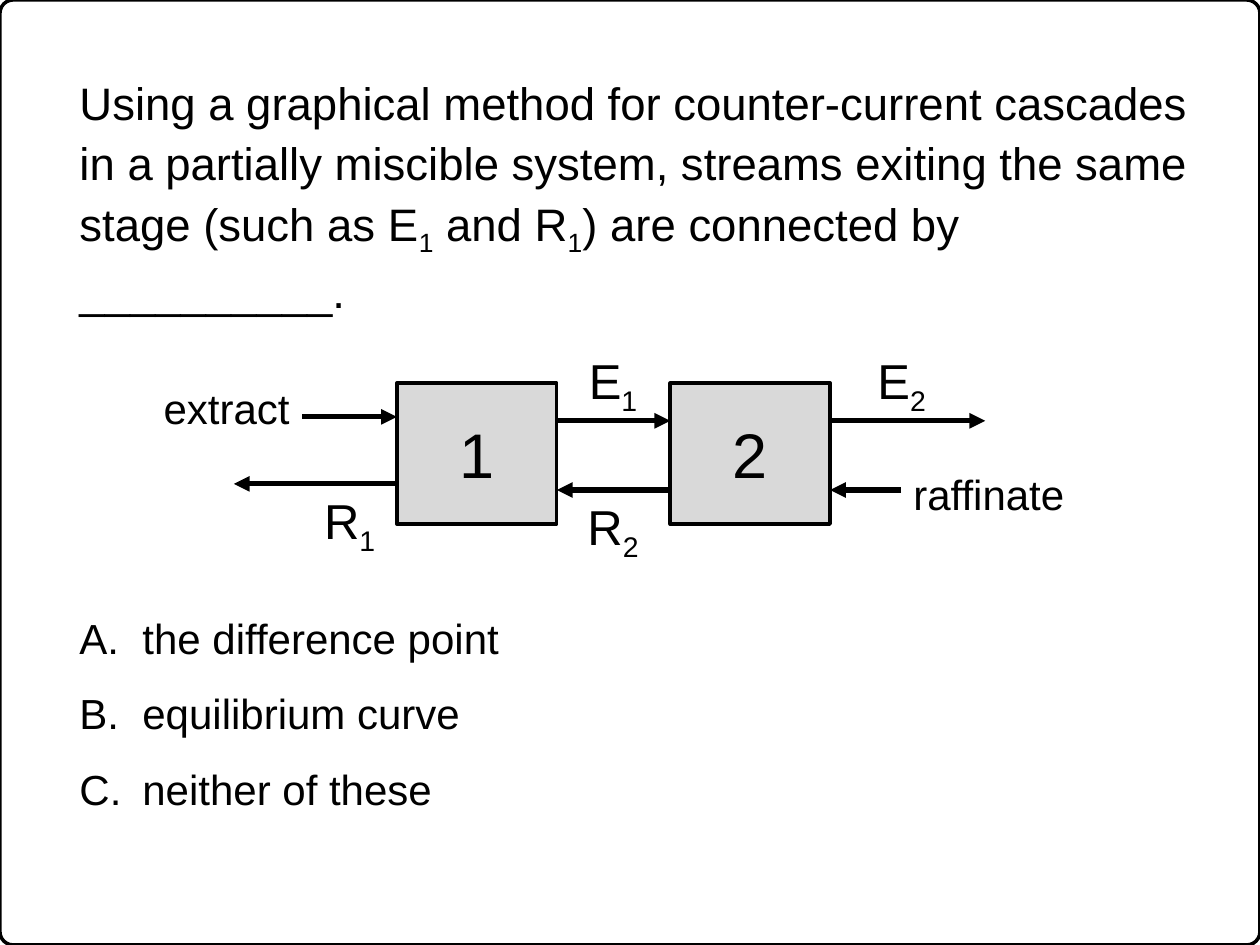
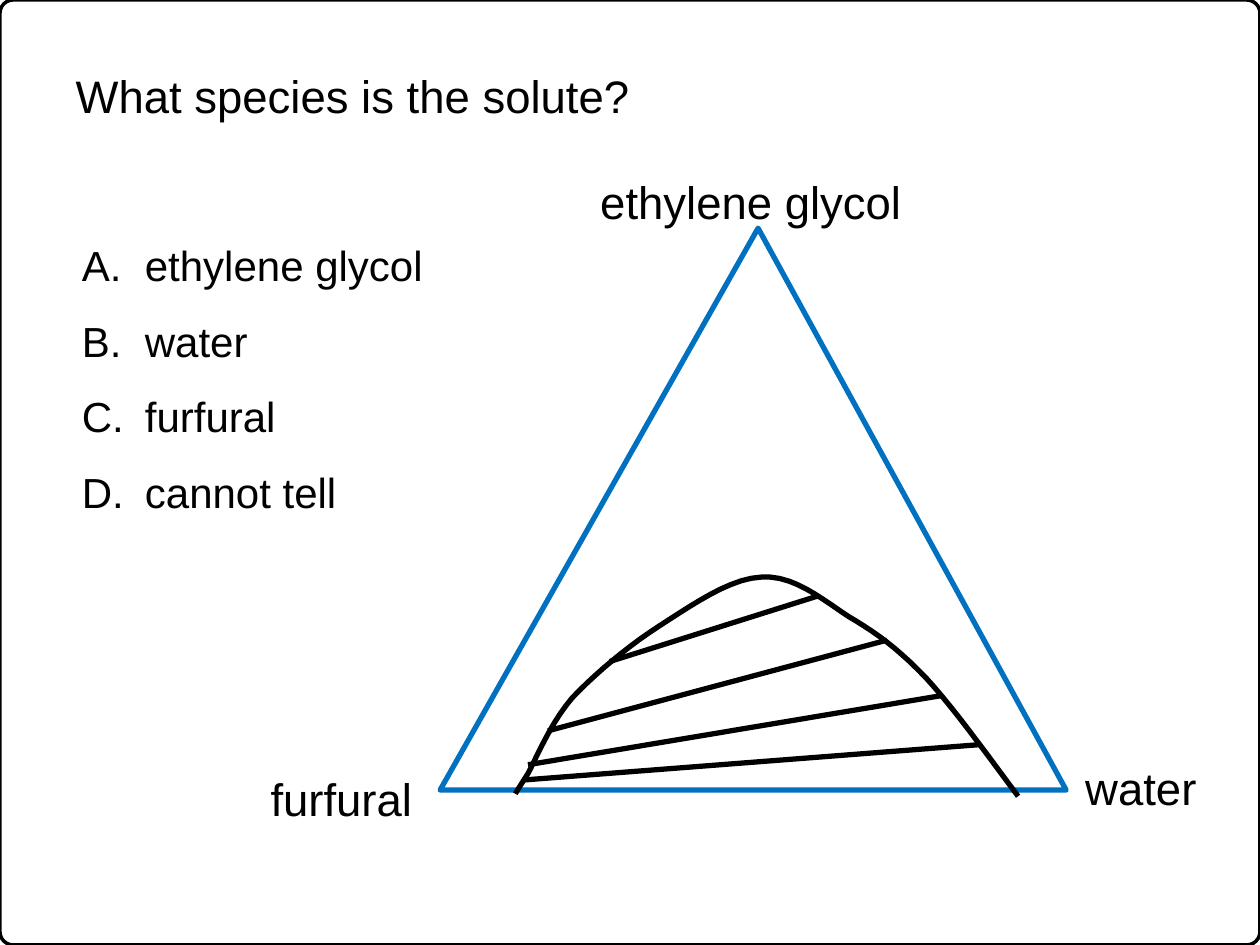
from lxml import etree
from pptx import Presentation
from pptx.dml.color import RGBColor
from pptx.enum.shapes import MSO_CONNECTOR, MSO_SHAPE
from pptx.enum.text import MSO_ANCHOR, MSO_AUTO_SIZE, PP_ALIGN
from pptx.oxml.ns import qn
from pptx.util import Pt

RECTANGLE = MSO_SHAPE.RECTANGLE
ROUNDED_RECTANGLE = MSO_SHAPE.ROUNDED_RECTANGLE
TRIANGLE = MSO_SHAPE.ISOSCELES_TRIANGLE
STRAIGHT = MSO_CONNECTOR.STRAIGHT
LEFT, CENTER = PP_ALIGN.LEFT, PP_ALIGN.CENTER
TOP, MIDDLE = MSO_ANCHOR.TOP, MSO_ANCHOR.MIDDLE
NO_AUTO_SIZE = MSO_AUTO_SIZE.NONE

FONT = "Arial"
BLACK, GRAY, BLUE = "000000", "D9D9D9", "0070C0"
SLIDE_WIDTH, SLIDE_HEIGHT = 720, 540
TITLE_ONLY = 5
QUESTION_SIZE, ANSWER_SIZE = 26, 24
ANSWER_INDENT = 36
CURVE_STEPS = 10


def color(hex_string):
    return RGBColor.from_string(hex_string)


def points(*lengths):
    return [Pt(length) for length in lengths]


def format_runs(paragraph, size):
    for run in paragraph.runs:
        run.font.name = FONT
        run.font.size = Pt(size)
        run.font.color.rgb = color(BLACK)


def write_with_subscripts(paragraph, parts, size):
    for index, part in enumerate(parts):
        run = paragraph.add_run()
        run.text = part
        if index % 2:
            run.font._element.set("baseline", "-25000")
    format_runs(paragraph, size)


def remove_margins(text_frame):
    text_frame.margin_left = text_frame.margin_right = 0
    text_frame.margin_top = text_frame.margin_bottom = 0


def style_shape(shape, line_color, line_width, fill=None):
    shape.shadow.inherit = False
    if fill:
        shape.fill.solid()
        shape.fill.fore_color.rgb = color(fill)
    else:
        shape.fill.background()
    shape.line.color.rgb = color(line_color)
    shape.line.width = Pt(line_width)


def add_question_slide(presentation, question, left, top, width):
    slide = presentation.slides.add_slide(presentation.slide_layouts[TITLE_ONLY])
    frame = slide.shapes.add_shape(
        ROUNDED_RECTANGLE, *points(0, 0, SLIDE_WIDTH, SLIDE_HEIGHT))
    frame.adjustments[0] = 0.014
    style_shape(frame, BLACK, 2)

    title = slide.shapes.title
    title.left, title.top, title.width, title.height = points(left, top, width, 180)
    text_frame = title.text_frame
    text_frame.auto_size = NO_AUTO_SIZE
    text_frame.vertical_anchor = TOP
    remove_margins(text_frame)
    paragraph = text_frame.paragraphs[0]
    paragraph.alignment = LEFT
    paragraph.line_spacing = 1.1
    write_with_subscripts(paragraph, question, QUESTION_SIZE)
    return slide


def add_lettering(paragraph):
    properties = paragraph._p.get_or_add_pPr()
    properties.set("marL", str(Pt(ANSWER_INDENT)))
    properties.set("indent", str(-Pt(ANSWER_INDENT)))
    bullet_color = etree.SubElement(properties, qn("a:buClr"))
    etree.SubElement(bullet_color, qn("a:srgbClr"), val=BLACK)
    etree.SubElement(properties, qn("a:buFont"), typeface=FONT)
    etree.SubElement(properties, qn("a:buAutoNum"), type="alphaUcPeriod")


def add_answers(slide, answers, left, top, width, height):
    box = slide.shapes.add_textbox(*points(left, top, width, height))
    text_frame = box.text_frame
    text_frame.word_wrap = True
    remove_margins(text_frame)
    text_frame.text = "\n".join(answers)
    for paragraph in text_frame.paragraphs:
        add_lettering(paragraph)
        paragraph.line_spacing = 1.5
        format_runs(paragraph, ANSWER_SIZE)


def add_label(slide, parts, left, top, width, height, size, alignment=CENTER):
    box = slide.shapes.add_textbox(*points(left, top, width, height))
    box.text_frame.word_wrap = True
    paragraph = box.text_frame.paragraphs[0]
    paragraph.alignment = alignment
    write_with_subscripts(paragraph, parts, size)


def add_stage(slide, number, left, top, width, height):
    stage = slide.shapes.add_shape(RECTANGLE, *points(left, top, width, height))
    style_shape(stage, BLACK, 2, GRAY)
    stage.text_frame.text = number
    stage.text_frame.vertical_anchor = MIDDLE
    paragraph = stage.text_frame.paragraphs[0]
    paragraph.alignment = CENTER
    format_runs(paragraph, 36)


def add_line(slide, start_x, start_y, end_x, end_y, arrow=False):
    connector = slide.shapes.add_connector(
        STRAIGHT, *points(start_x, start_y, end_x, end_y))
    connector.line.color.rgb = color(BLACK)
    connector.line.width = Pt(3)
    if arrow:
        line = connector.line._get_or_add_ln()
        etree.SubElement(line, qn("a:tailEnd"), type="triangle")
    etree.SubElement(connector._element.spPr, qn("a:effectLst"))


def bezier_point(start, control_1, control_2, end, t):
    return tuple(
        (1 - t) ** 3 * a + 3 * (1 - t) ** 2 * t * b + 3 * (1 - t) * t ** 2 * c + t ** 3 * d
        for a, b, c, d in zip(start, control_1, control_2, end))


def add_curve(slide, start, segments):
    vertices = []
    current = start
    for control_1, control_2, end in segments:
        for step in range(1, CURVE_STEPS + 1):
            x, y = bezier_point(current, control_1, control_2, end, step / CURVE_STEPS)
            vertices.append((Pt(x), Pt(y)))
        current = end
    builder = slide.shapes.build_freeform(*points(*start))
    builder.add_line_segments(vertices, close=False)
    style_shape(builder.convert_to_shape(), BLACK, 3)


def add_cascade(slide):
    stage_width, stage_top, stage_height = 91.4, 218.9, 80.6
    first_left, second_left = 226.8, 383
    first_right, second_right = first_left + stage_width, second_left + stage_width
    for number, left in (("1", first_left), ("2", second_left)):
        add_stage(slide, number, left, stage_top, stage_width, stage_height)

    streams = [
        (172.8, first_left, 238.2),
        (first_right, second_left, 240.5),
        (second_right, 563, 240.5),
        (515, second_right, 280),
        (second_left, first_right, 280),
        (first_left, 133.6, 276.5),
    ]
    for start_x, end_x, y in streams:
        add_line(slide, start_x, y, end_x, y, arrow=True)

    add_label(slide, ["extract"], 86.4, 215.3, 95, 36, 24, LEFT)
    add_label(slide, ["raffinate"], 514.8, 264.2, 116.6, 36, 24, LEFT)
    stream_names = [
        ("E", "1", 323.3, 196.6),
        ("E", "2", 488.2, 196.6),
        ("R", "2", 323.3, 280),
        ("R", "1", 172.8, 276.5),
    ]
    for letter, number, left, top in stream_names:
        add_label(slide, [letter, number], left, top, 54, 45.4, 28)


def add_ternary_diagram(slide):
    triangle = slide.shapes.add_shape(TRIANGLE, *points(251.5, 130.4, 357.8, 321.1))
    triangle.adjustments[0] = 0.508
    style_shape(triangle, BLUE, 3)

    add_curve(slide, (294.5, 453.6), [
        ((295.2, 452.2), (301.7, 442.1), (301.7, 442.1)),
        ((306.7, 432.7), (314.6, 413.3), (326.9, 398.9)),
        ((339.8, 385.2), (358.6, 369.4), (376.6, 357.8)),
        ((394.6, 346.3), (416.9, 330.5), (434.9, 329.8)),
        ((452.9, 328.3), (469.4, 342), (484.6, 352.1)),
        ((500.4, 361.4), (512.6, 370.1), (529.2, 387.4)),
        ((545, 404.6), (563, 429.8), (581.8, 455)),
    ])

    tie_lines = [
        (348.5, 378, 467.3, 340.6),
        (313.2, 417.6, 506.9, 365.8),
        (301.7, 437, 538.6, 397.4),
        (299.5, 445.7, 560.2, 425.5),
    ]
    for tie_line in tie_lines:
        add_line(slide, *tie_line)

    corners = [
        ("ethylene glycol", 276.5, 95.8, 305.3),
        ("water", 597.6, 430.6, 108.7),
        ("furfural", 130.3, 437, 129.6),
    ]
    for species, left, top, width in corners:
        add_label(slide, [species], left, top, width, 38.2, 26)


def main():
    presentation = Presentation()
    presentation.slide_width, presentation.slide_height = points(SLIDE_WIDTH, SLIDE_HEIGHT)

    cascade_question = [
        "Using a graphical method for counter-current cascades in a partially "
        "miscible system, streams exiting the same stage (such as E",
        "1", " and R", "1", ") are connected by __________."]
    slide = add_question_slide(presentation, cascade_question, 45.4, 39.6, 654.5)
    add_answers(slide, ["the difference point", "equilibrium curve", "neither of these"],
                45.4, 335.5, 372.2, 177.8)
    add_cascade(slide)

    slide = add_question_slide(
        presentation, ["What species is the solute?"], 43.2, 36, 632.9)
    add_answers(slide, ["ethylene glycol", "water", "furfural", "cannot tell"],
                46.8, 122.4, 241.2, 260.6)
    add_ternary_diagram(slide)

    presentation.save("out.pptx")


if __name__ == "__main__":
    main()
